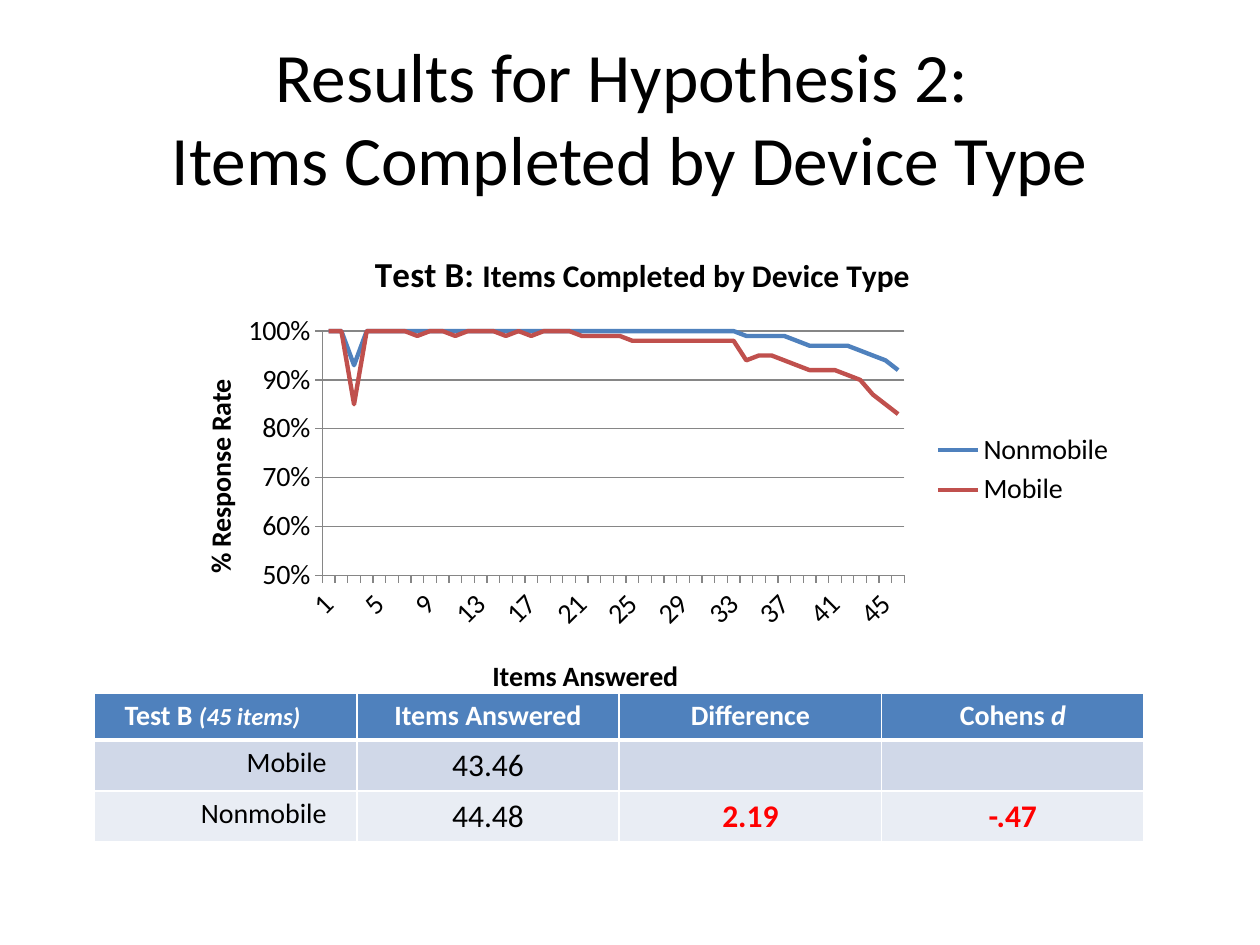
from dataclasses import dataclass

from lxml import etree
from pptx import Presentation
from pptx.chart.data import CategoryChartData
from pptx.dml.color import RGBColor
from pptx.enum.chart import XL_CHART_TYPE, XL_LEGEND_POSITION, XL_TICK_MARK
from pptx.enum.text import MSO_ANCHOR, PP_ALIGN
from pptx.oxml import parse_xml
from pptx.oxml.ns import nsdecls, qn
from pptx.util import Inches, Pt

LINE = XL_CHART_TYPE.LINE
LEGEND_RIGHT = XL_LEGEND_POSITION.RIGHT
TICK_OUT, TICK_NONE = XL_TICK_MARK.OUTSIDE, XL_TICK_MARK.NONE
LEFT, CENTER, RIGHT = PP_ALIGN.LEFT, PP_ALIGN.CENTER, PP_ALIGN.RIGHT
MIDDLE = MSO_ANCHOR.MIDDLE


@dataclass(frozen=True)
class Theme:
    """Colours, font and type sizes of the slide."""
    font: str = "Calibri"
    black: str = "000000"
    white: str = "FFFFFF"
    blue: str = "4F81BD"
    red: str = "C0504D"
    accent: str = "FF0000"
    grid: str = "868686"
    bands: tuple = ("D0D8E8", "E9EDF4")
    title: float = 39.6
    chart_title: float = 20
    large: float = 18
    body: float = 16
    small: float = 14


THEME = Theme()
NONMOBILE = [100, 100, 93] + [100] * 30 + [
    99, 99, 99, 99, 98, 97, 97, 97, 97, 96, 95, 94, 92]
MOBILE = [100, 100, 85, 100, 100, 100, 100, 99, 100, 100, 99, 100, 100, 100,
          99, 100, 99, 100, 100, 100, 99, 99, 99, 99] + [98] * 9 + [
          94, 95, 95, 94, 93, 92, 92, 92, 91, 90, 87, 85, 83]
SERIES = (("Nonmobile", NONMOBILE, THEME.blue), ("Mobile", MOBILE, THEME.red))


def style_font(font, size, color=THEME.black, bold=False, italic=False):
    """Apply the theme font with a size, colour and weight."""
    font.name, font.size = THEME.font, Pt(size)
    font.bold, font.italic = bold, italic
    font.color.rgb = RGBColor.from_string(color)


def add_run(p, text, size, color=THEME.black, bold=False, italic=False):
    """Append a formatted run to a paragraph."""
    r = p.add_run()
    r.text = text
    style_font(r.font, size, color, bold, italic)


def set_title(s, text):
    """Place and format the title placeholder."""
    sp = s.shapes.title
    sp.left, sp.top, sp.width, sp.height = map(Inches, (0.5, 0.3, 9, 1.25))
    tf = sp.text_frame
    tf.text = text
    tf.vertical_anchor = MIDDLE
    p = tf.paragraphs[0]
    p.alignment = CENTER
    for r in p.runs:
        style_font(r.font, THEME.title)


def place(parent, after, inner=False, **shares):
    """Give a chart part a manual layout in shares of the chart size."""
    for old in parent.findall(qn("c:layout")):
        parent.remove(old)
    layout = etree.Element(qn("c:layout"))
    manual = etree.SubElement(layout, qn("c:manualLayout"))
    values = {"layoutTarget": "inner"} if inner else {}
    values.update(xMode="edge", yMode="edge", **shares)
    for tag, value in values.items():
        etree.SubElement(manual, qn("c:" + tag)).set("val", str(value))
    parent.insert(0 if after is None else parent.index(after) + 1, layout)


def style_axis(axis, title, x, y):
    """Format an axis and place its title."""
    p = axis.axis_title.text_frame.paragraphs[0]
    add_run(p, title, THEME.body, bold=True)
    el = axis.axis_title._element
    place(el, el.find(qn("c:tx")), x=x, y=y)
    axis.major_tick_mark, axis.minor_tick_mark = TICK_OUT, TICK_NONE
    style_font(axis.tick_labels.font, THEME.body)
    style_line(axis.format.line, THEME.grid, 0.75)


def style_line(line, color, width):
    """Set a line's colour and width."""
    line.color.rgb = RGBColor.from_string(color)
    line.width = Pt(width)


def add_response_chart(s):
    """Add the line chart of response rates."""
    data = CategoryChartData(number_format="0%")
    data.categories = [str(n + 1) for n in range(len(MOBILE))]
    for name, percents, _ in SERIES:
        data.add_series(name, [v / 100 for v in percents])
    box = map(Inches, (1.25, 1.83, 7.7, 3.8))
    chart = s.shapes.add_chart(LINE, *box, data).chart
    style_font(chart.font, 10)
    p = chart.chart_title.text_frame.paragraphs[0]
    add_run(p, "Test B: ", THEME.chart_title, bold=True)
    add_run(p, "Items Completed by Device Type", THEME.large, bold=True)
    chart.chart_title.include_in_layout = False
    chart.has_legend = True
    chart.legend.position = LEGEND_RIGHT
    chart.legend.include_in_layout = False
    style_font(chart.legend.font, THEME.body)
    chart.plots[0].vary_by_categories = False
    for series, (_, _, color) in zip(chart.plots[0].series, SERIES):
        series.smooth = False
        style_line(series.format.line, color, 2.5)
    cat, val = chart.category_axis, chart.value_axis
    style_axis(cat, "Items Answered", 0.34, 0.88)
    style_axis(val, "% Response Rate", 0.04, 0.3)
    cat._element.find(qn("c:txPr")).find(qn("a:bodyPr")).set("rot", "-2700000")
    val.minimum_scale, val.maximum_scale, val.major_unit = 0.5, 1, 0.1
    val.tick_labels.number_format = "0%"
    val.tick_labels.number_format_is_linked = False
    style_line(val.major_gridlines.format.line, THEME.grid, 0.75)
    place(chart.plots[0]._element.getparent(), None, inner=True,
          x=0.17, y=0.21, w=0.6, h=0.51)


def style_cell(cell, fill, bottom=1):
    """Set a cell's margins, white borders and fill."""
    cell.margin_left = cell.margin_right = Inches(0.24)
    tcPr = cell._tc.get_or_add_tcPr()
    for side, width in (("L", 1), ("R", 1), ("T", 1), ("B", bottom)):
        tcPr.append(parse_xml(
            f'<a:ln{side} {nsdecls("a")} w="{Pt(width)}"><a:solidFill>'
            f'<a:srgbClr val="{THEME.white}"/></a:solidFill></a:ln{side}>'))
    cell.fill.solid()
    cell.fill.fore_color.rgb = RGBColor.from_string(fill)


def fill_cell(cell, align, *runs):
    """Write formatted runs into a cell."""
    p = cell.text_frame.paragraphs[0]
    p.alignment = align
    for text, size, color, bold, italic in runs:
        add_run(p, text, size, color, bold, italic)


def add_results_table(s):
    """Add the table of items answered by device."""
    heads = (("Test B ", "(45 items)", THEME.small), ("Items Answered", "", 0),
             ("Difference", "", 0), ("Cohens ", "d", THEME.body))
    rows = (("Mobile", "43.46", "", ""), ("Nonmobile", "44.48", "2.19", "-.47"))
    box = map(Inches, (0.75, 5.5, 8.33, 1.17))
    table = s.shapes.add_table(len(rows) + 1, len(heads), *box).table
    for row, height in zip(table.rows, (0.37, 0.4, 0.4)):
        row.height = Inches(height)
    for col, (text, italic, size) in enumerate(heads):
        cell = table.cell(0, col)
        style_cell(cell, THEME.blue, bottom=3)
        runs = [(text, THEME.body, THEME.white, True, False)]
        if italic:
            runs.append((italic, size, THEME.white, True, True))
        fill_cell(cell, CENTER if col else LEFT, *runs)
    looks = ((RIGHT, THEME.body, THEME.black, False),
             (CENTER, THEME.large, THEME.black, False),
             (CENTER, THEME.large, THEME.accent, True),
             (CENTER, THEME.large, THEME.accent, True))
    for row, (texts, band) in enumerate(zip(rows, THEME.bands), 1):
        for col, (text, look) in enumerate(zip(texts, looks)):
            cell = table.cell(row, col)
            style_cell(cell, band)
            if text:
                align, size, color, bold = look
                fill_cell(cell, align, (text, size, color, bold, False))


def main():
    """Build the slide and save it."""
    prs = Presentation()
    prs.slide_width, prs.slide_height = Inches(10), Inches(7.5)
    s = prs.slides.add_slide(prs.slide_layouts[5])
    set_title(s, "Results for Hypothesis 2: \vItems Completed by Device Type")
    add_results_table(s)
    add_response_chart(s)
    prs.save("out.pptx")


if __name__ == "__main__":
    main()
